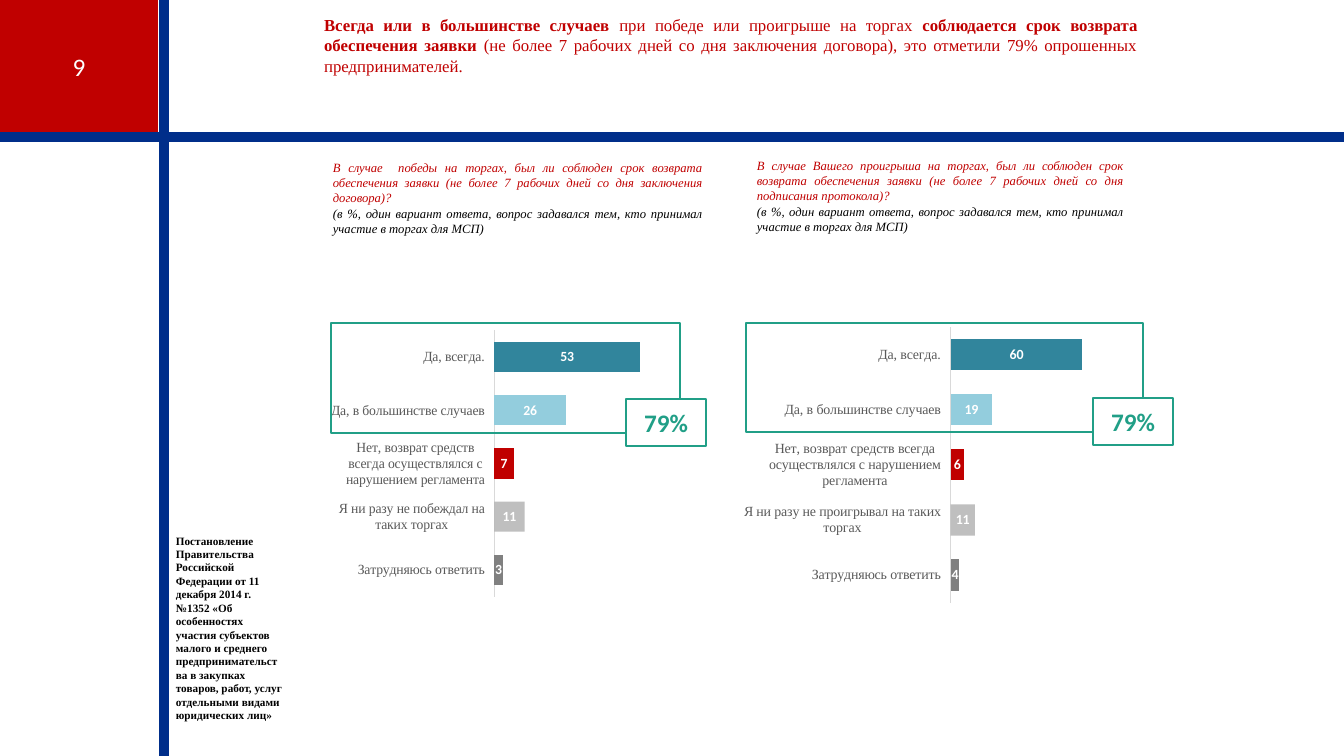
"""Build the slide on deposit return deadlines: two survey bar charts with 79% callouts."""
from lxml.etree import SubElement
from pptx import Presentation
from pptx.chart.data import CategoryChartData
from pptx.dml.color import RGBColor
from pptx.enum.chart import XL_CHART_TYPE, XL_LABEL_POSITION, XL_TICK_LABEL_POSITION, XL_TICK_MARK
from pptx.enum.shapes import MSO_CONNECTOR, MSO_SHAPE
from pptx.enum.text import MSO_ANCHOR, MSO_AUTO_SIZE, PP_ALIGN
from pptx.oxml import parse_xml
from pptx.oxml.ns import nsdecls, qn
from pptx.util import Pt

PX = 914400 / 100.8
WIDTH, HEIGHT = 1344, 756
THEME = {
    "red": RGBColor(0xC0, 0, 0), "navy": RGBColor(0, 0x2E, 0x8A),
    "green": RGBColor(0x21, 0x9F, 0x87), "white": RGBColor(255, 255, 255),
    "black": RGBColor(0, 0, 0), "label": RGBColor(0x59, 0x59, 0x59),
    "axis": RGBColor(0xD9, 0xD9, 0xD9), "teal": RGBColor(0x31, 0x85, 0x9C),
    "sky": RGBColor(0x93, 0xCD, 0xDD), "grey": RGBColor(0x80, 0x80, 0x80),
    "serif": "Times New Roman", "sans": "Calibri",
    "big": Pt(18), "heading": Pt(12), "chart": Pt(10), "question": Pt(9), "note": Pt(8),
}


def write(sp, paragraphs, align, anchor, font):
    """Fill a shape with paragraphs of (text, colour, bold) runs in one shared font."""
    tf = sp.text_frame
    for key, value in {"word_wrap": True, "auto_size": MSO_AUTO_SIZE.NONE,
                       "vertical_anchor": anchor}.items():
        setattr(tf, key, value)
    for i, runs in enumerate(paragraphs):
        p = tf.paragraphs[0] if i == 0 else tf.add_paragraph()
        p.alignment = align
        for text, color, bold in runs:
            r = p.add_run()
            r.text = text
            for key, value in {**font, "bold": bold}.items():
                setattr(r.font, key, value)
            r.font.color.rgb = THEME[color]


def add_box(s, box, fill=None, line=None):
    """Add a flat rectangle with an optional fill and outline."""
    sp = s.shapes.add_shape(MSO_SHAPE.RECTANGLE, *(round(v * PX) for v in box))
    sp.shadow.inherit = False
    if fill:
        sp.fill.solid()
        sp.fill.fore_color.rgb = THEME[fill]
    else:
        sp.fill.background()
    if line:
        sp.line.color.rgb = THEME[line]
        sp.line.width = Pt(1.5)
    else:
        sp.line.fill.background()
    return sp


prs = Presentation()
prs.slide_width, prs.slide_height = round(WIDTH * PX), round(HEIGHT * PX)
s = prs.slides.add_slide(prs.slide_layouts[5])

title = s.shapes.title
for key, value in zip(("left", "top", "width", "height"), (314, 10, 834, 72)):
    setattr(title, key, round(value * PX))
write(title, [[
    ("Всегда или в большинстве случаев ", "red", True),
    ("при победе или проигрыше на торгах ", "red", False),
    ("соблюдается срок возврата обеспечения заявки ", "red", True),
    ("(не более 7 рабочих дней со дня заключения договора), это отметили 79% опрошенных "
     "предпринимателей.", "red", False),
]], PP_ALIGN.JUSTIFY, MSO_ANCHOR.TOP, {"name": THEME["serif"], "size": THEME["heading"]})

number = add_box(s, (0, 0, 158, 133), fill="red")
write(number, [[("9", "white", False)]], PP_ALIGN.CENTER, MSO_ANCHOR.MIDDLE,
      {"name": THEME["sans"], "size": THEME["big"]})

for ends in ((164, 0, 164, HEIGHT), (0, 137, WIDTH, 137)):
    rule = s.shapes.add_connector(MSO_CONNECTOR.STRAIGHT, *(round(v * PX) for v in ends))
    rule.line.color.rgb = THEME["navy"]
    rule.line.width = Pt(7)
    SubElement(rule._element.spPr, qn("a:effectLst"))

note = s.shapes.add_textbox(*(round(v * PX) for v in (166, 529, 127, 214)))
write(note, [[(
    "Постановление Правительства Российской Федерации от 11 декабря 2014 г. №1352 "
    "«Об особенностях участия субъектов малого и среднего предпринимательства в закупках "
    "товаров, работ, услуг отдельными видами юридических лиц»", "black", True)]],
    PP_ALIGN.LEFT, MSO_ANCHOR.TOP, {"name": THEME["serif"], "size": THEME["note"]})

surveys = [
    {"question": "В случае  победы на торгах, был ли соблюден срок возврата обеспечения заявки "
                 "(не более 7 рабочих дней со дня заключения договора)?",
     "never": "Я ни разу не побеждал на таких торгах", "values": (53, 26, 7, 11, 3),
     "maximum": 60, "plot": (0.446, 0.065, 0.471, 0.845), "text": (323, 155, 389, 87),
     "chart": (331, 310, 357, 315), "frame": (331, 323, 349, 110), "badge": (626, 399, 80, 47)},
    {"question": "В случае Вашего проигрыша на торгах, был ли соблюден срок возврата обеспечения "
                 "заявки (не более 7 рабочих дней со дня подписания протокола)?",
     "never": "Я ни разу не проигрывал на таких торгах", "values": (60, 19, 6, 11, 4),
     "maximum": 70, "plot": (0.515, 0.055, 0.388, 0.874), "text": (747, 153, 386, 87),
     "chart": (744, 310, 399, 315), "frame": (746, 323, 397, 109), "badge": (1093, 398, 80, 47)},
]

for survey in surveys:
    sp = s.shapes.add_textbox(*(round(v * PX) for v in survey["text"]))
    write(sp, [
        [(survey["question"], "red", False)],
        [("(в %, один вариант ответа, вопрос задавался тем, кто принимал участие в торгах "
          "для МСП)", "black", False)],
    ], PP_ALIGN.JUSTIFY, MSO_ANCHOR.TOP,
        {"name": THEME["serif"], "size": THEME["question"], "italic": True})

    data = CategoryChartData(number_format="#,##0")
    data.categories = ["Да, всегда.", "Да, в большинстве случаев",
                       "Нет, возврат средств всегда осуществлялся с нарушением регламента",
                       survey["never"], "Затрудняюсь ответить"]
    data.add_series("Series 1", survey["values"])
    chart = s.shapes.add_chart(XL_CHART_TYPE.BAR_STACKED,
                               *(round(v * PX) for v in survey["chart"]), data).chart
    chart.has_legend = chart.has_title = False
    chart.font.name, chart.font.size = THEME["sans"], THEME["chart"]
    chart.font.color.rgb = THEME["black"]

    plot_area = chart._chartSpace.chart.plotArea
    for old in plot_area.findall(qn("c:layout")):
        plot_area.remove(old)
    sizes = "".join(f'<c:{tag} val="{v}"/>' for tag, v in zip("xywh", survey["plot"]))
    plot_area.insert(0, parse_xml(
        f'<c:layout {nsdecls("c")}><c:manualLayout><c:layoutTarget val="inner"/>'
        f'<c:xMode val="edge"/><c:yMode val="edge"/>{sizes}</c:manualLayout></c:layout>'))

    axis = chart.category_axis
    for key, value in {"reverse_order": True, "major_tick_mark": XL_TICK_MARK.NONE,
                       "minor_tick_mark": XL_TICK_MARK.NONE, "has_major_gridlines": False,
                       "tick_label_position": XL_TICK_LABEL_POSITION.LOW}.items():
        setattr(axis, key, value)
    axis.format.line.color.rgb = THEME["axis"]
    axis.format.line.width = Pt(0.75)
    font = axis.tick_labels.font
    font.name, font.size, font.color.rgb = THEME["serif"], THEME["chart"], THEME["label"]
    for key, value in {"minimum_scale": 0, "maximum_scale": survey["maximum"],
                       "has_major_gridlines": False, "visible": False}.items():
        setattr(chart.value_axis, key, value)

    plot = chart.plots[0]
    for key, value in {"gap_width": 77, "overlap": 100, "vary_by_categories": False,
                       "has_data_labels": True}.items():
        setattr(plot, key, value)
    labels = plot.data_labels
    for key, value in {"show_value": True, "position": XL_LABEL_POSITION.CENTER,
                       "number_format": "#,##0", "number_format_is_linked": False}.items():
        setattr(labels, key, value)
    for key, value in {"name": THEME["sans"], "size": THEME["chart"], "bold": True}.items():
        setattr(labels.font, key, value)
    labels.font.color.rgb = THEME["white"]

    for i, color in enumerate(("teal", "sky", "red", "grey", "grey")):
        fill = plot.series[0].points[i].format.fill
        fill.solid()
        fill.fore_color.rgb = THEME[color]
    never = plot.series[0].points[3].format.fill._xPr
    SubElement(never.find(".//" + qn("a:srgbClr")), qn("a:alpha"), val="50000")

    add_box(s, survey["frame"], line="green")
    badge = add_box(s, survey["badge"], fill="white", line="green")
    write(badge, [[("79%", "green", True)]], PP_ALIGN.CENTER, MSO_ANCHOR.MIDDLE,
          {"name": THEME["sans"], "size": THEME["big"]})

prs.save("out.pptx")
